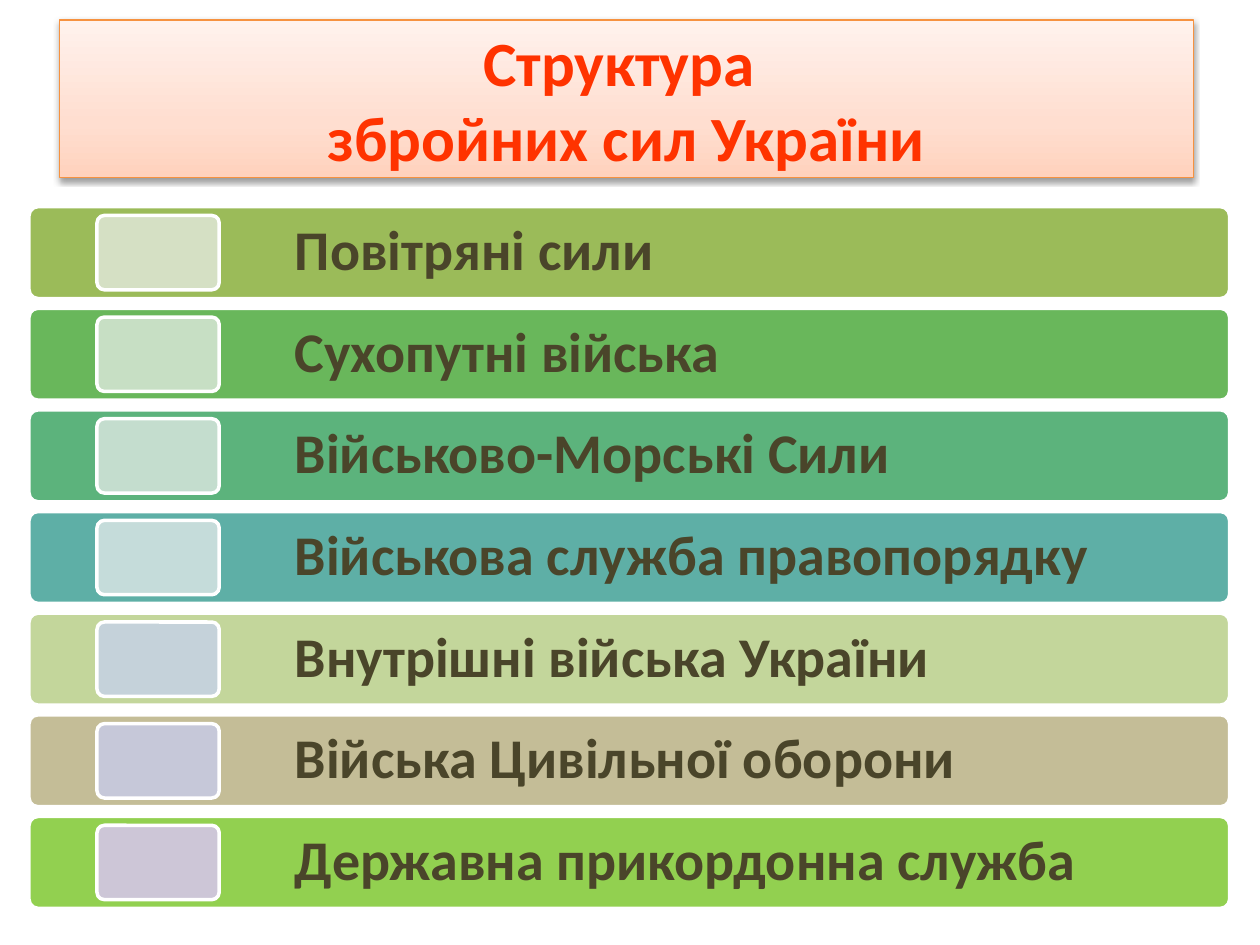
from dataclasses import dataclass

from lxml.etree import SubElement
from pptx import Presentation
from pptx.dml.color import RGBColor
from pptx.enum.shapes import MSO_SHAPE
from pptx.enum.text import MSO_ANCHOR, PP_ALIGN
from pptx.oxml import parse_xml
from pptx.oxml.ns import nsdecls, qn
from pptx.util import Inches, Pt


@dataclass(frozen=True)
class Theme:
    font: str = "Calibri"
    head: str = "FF3300"
    edge: str = "F69240"
    ink: str = "4A452A"
    white: str = "FFFFFF"
    fade: tuple = ((0, "FFD2BD"), (35, "FFDED0"), (100, "FFF2ED"))
    head_size: int = 36
    row_size: int = 32


# Label, bar colour, tile colour
ROWS = [
    ("Повітряні сили", "9BBB59", "D5E0C4"),
    ("Сухопутні війська", "69B75B", "C7DFC4"),
    ("Військово-Морські Сили", "5CB37C", "C4DDCE"),
    ("Військова служба правопорядку", "5EAFA6", "C5DCDA"),
    ("Внутрішні війська України", "C3D69B", "C5D2DA"),
    ("Війська Цивільної оборони", "C4BD97", "C6C8D9"),
    ("Державна прикордонна служба", "92D050", "CDC6D7"),
]


class Deck:
    def __init__(self, theme):
        self.theme = theme
        self.prs = Presentation()
        self.prs.slide_width, self.prs.slide_height = Inches(10), Inches(7.5)
        self.slide = self.prs.slides.add_slide(self.prs.slide_layouts[5])

    def style(self, para, size, color):
        font = para.font
        font.name, font.size, font.bold = self.theme.font, Pt(size), True
        font.color.rgb = RGBColor.from_string(color)

    def title(self, lines, left, top, width, height):
        box = self.slide.shapes.title
        box.left, box.top = Inches(left), Inches(top)
        box.width, box.height = Inches(width), Inches(height)
        # Gradient fill, palest at the top
        props = box.fill._xPr
        grad = parse_xml(f'<a:gradFill {nsdecls("a")} rotWithShape="1"/>')
        stops = SubElement(grad, qn("a:gsLst"))
        for pos, color in self.theme.fade:
            stop = SubElement(stops, qn("a:gs"), pos=str(pos * 1000))
            SubElement(stop, qn("a:srgbClr"), val=color)
        SubElement(grad, qn("a:lin"), ang=str(270 * 60000), scaled="1")
        props.append(grad)
        box.line.color.rgb = RGBColor.from_string(self.theme.edge)
        box.line.width = Pt(0.75)
        # Soft shadow below
        props.append(parse_xml(
            f'<a:effectLst {nsdecls("a")}><a:outerShdw blurRad="{Pt(3.1)}" '
            f'dist="{Pt(1.6)}" dir="5400000" rotWithShape="0">'
            '<a:srgbClr val="000000"><a:alpha val="38000"/></a:srgbClr>'
            '</a:outerShdw></a:effectLst>'))
        frame = box.text_frame
        frame.vertical_anchor = MSO_ANCHOR.MIDDLE
        para = frame.paragraphs[0]
        para.alignment = PP_ALIGN.CENTER
        for i, line in enumerate(lines):
            if i:
                para.add_line_break()
            para.add_run().text = line
        self.style(para, self.theme.head_size, self.theme.head)

    def panel(self, color, left, top, width, height):
        box = self.slide.shapes.add_shape(
            MSO_SHAPE.ROUNDED_RECTANGLE, Inches(left), Inches(top),
            Inches(width), Inches(height))
        box.adjustments[0] = 0.1
        box.shadow.inherit = False
        box.fill.solid()
        box.fill.fore_color.rgb = RGBColor.from_string(color)
        box.line.color.rgb = RGBColor.from_string(self.theme.white)
        box.line.width = Pt(2)

    def label(self, text, left, top, width, height):
        box = self.slide.shapes.add_textbox(
            Inches(left), Inches(top), Inches(width), Inches(height))
        frame = box.text_frame
        frame.word_wrap = True
        frame.vertical_anchor = MSO_ANCHOR.MIDDLE
        frame.margin_left = frame.margin_right = Inches(0.13)
        frame.margin_top = frame.margin_bottom = Inches(0.13)
        para = frame.paragraphs[0]
        para.text = text
        para.line_spacing = 0.9
        self.style(para, self.theme.row_size, self.theme.ink)


def main():
    deck = Deck(Theme())
    # Heading
    deck.title(["Структура ", "збройних сил України"], 0.47, 0.16, 9, 1.25)
    # One bar, label and tile per branch
    first, last = 1.64, 6.48
    step = (last - first) / (len(ROWS) - 1)
    for i, (text, bar, tile) in enumerate(ROWS):
        top = first + i * step
        deck.panel(bar, 0.23, top, 9.53, 0.73)
        deck.label(text, 2.21, top, 7.55, 0.73)
        deck.panel(tile, 0.77, top + 0.07, 0.97, 0.59)
    deck.prs.save("out.pptx")


if __name__ == "__main__":
    main()
